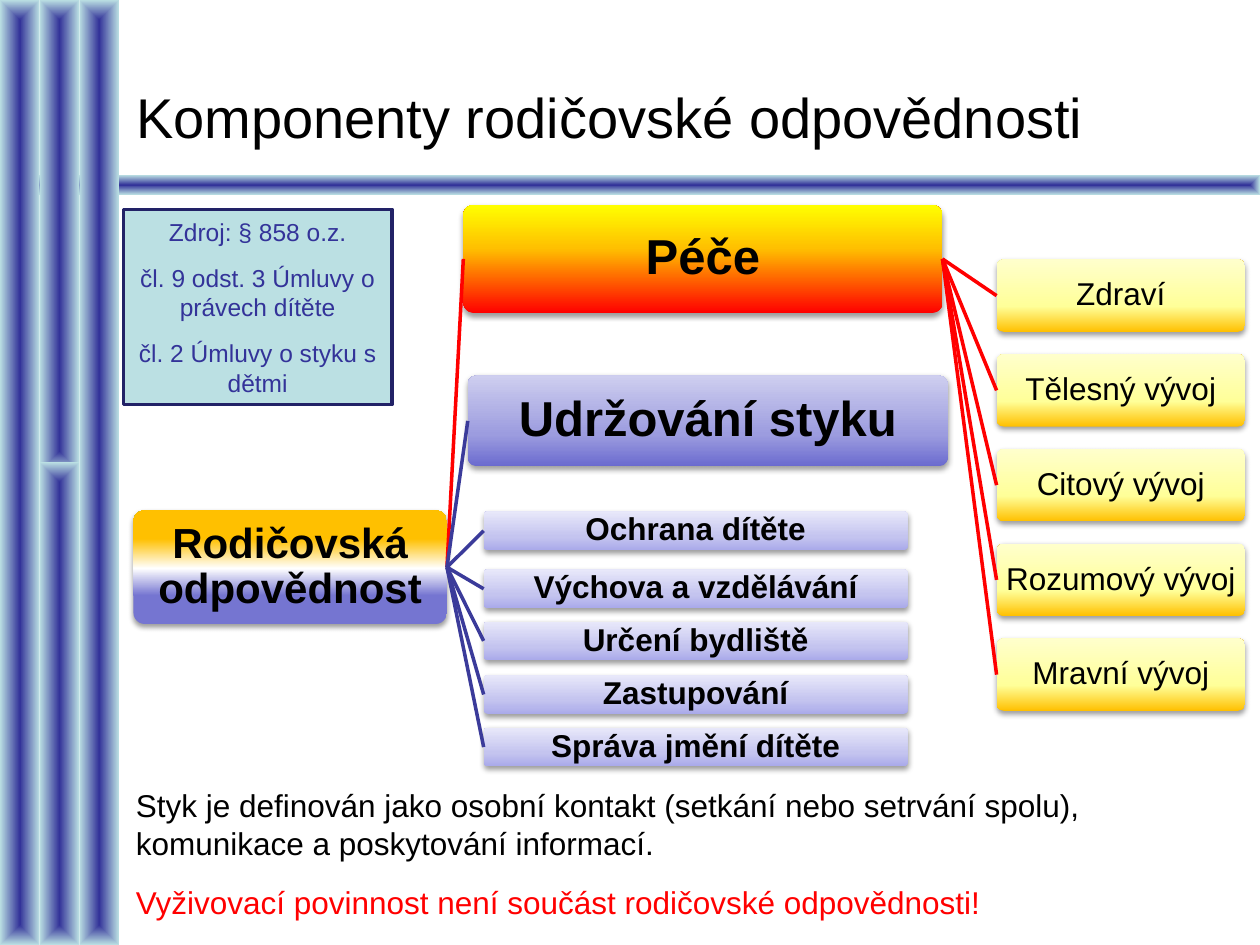
from lxml import etree
from pptx import Presentation
from pptx.dml.color import RGBColor
from pptx.enum.shapes import MSO_CONNECTOR, MSO_SHAPE
from pptx.enum.text import MSO_ANCHOR, MSO_AUTO_SIZE, PP_ALIGN
from pptx.oxml import parse_xml
from pptx.oxml.ns import nsdecls, qn
from pptx.util import Cm, Pt

RECT, ROUND = MSO_SHAPE.RECTANGLE, MSO_SHAPE.ROUNDED_RECTANGLE
LINE = MSO_CONNECTOR.STRAIGHT
LEFT, CENTER = PP_ALIGN.LEFT, PP_ALIGN.CENTER
TOP, MIDDLE = MSO_ANCHOR.TOP, MSO_ANCHOR.MIDDLE
LEFT_SITE, RIGHT_SITE = 1, 3  # connection sites of a box

# Content
TITLE = "Komponenty rodičovské odpovědnosti"
ROOT = "Rodičovská odpovědnost"
CARE = "Péče"
TOUCH = "Udržování styku"
GROWTH = ["Zdraví", "Tělesný vývoj", "Citový vývoj", "Rozumový vývoj", "Mravní vývoj"]
RIGHTS = [  # text, top in cm
    ("Ochrana dítěte", 10.31),
    ("Výchova a vzdělávání", 11.48),
    ("Určení bydliště", 12.53),
    ("Zastupování", 13.61),
    ("Správa jmění dítěte", 14.67),
]
LAWS = [
    "Zdroj: § 858 o.z.",
    "čl. 9 odst. 3 Úmluvy o právech dítěte",
    "čl. 2 Úmluvy o styku s dětmi",
]
NOTES = [
    "Styk je definován jako osobní kontakt (setkání nebo setrvání spolu), "
    "komunikace a poskytování informací.",
    "Vyživovací povinnost není součást rodičovské odpovědnosti!",
]

# Theme; gradient stops run from bottom to top, or from the middle outwards
THEME = {
    "font": "Arial",
    "size": {"title": 32, "main": 28, "root": 24, "text": 18, "law": 14},
    "ink": "000000", "red": "FF0000", "blue": "3B3B9A",
    "law": "333399", "pale": "BBE0E3", "edge": "222267",
    "band": [(0, "333399"), (100, "BBE0E3")],
    "root": [(0, "7575D1"), (25, "7575D1"), (49, "FFFFFF"), (75, "FFC000"), (100, "FFC000")],
    "care": [(0, "FF0000"), (60, "FFC000"), (100, "FFFF00")],
    "touch": [(0, "6B6BCF"), (35, "9C9CDF"), (100, "CECEEF")],
    "right": [(0, "AAAAEA"), (35, "C4C4EF"), (100, "E8E8FA")],
    "growth": [(0, "FFC000"), (35, "FFFF99"), (100, "FFFFCC")],
}
SIZE = THEME["size"]

# Places in cm: left, top, width, height
BANDS = [
    (0, 3.53, 25.4, 0.4),
    (0, 0, 0.8, 19.05),
    (1.6, 0, 0.8, 19.05),
    (0.8, 0, 0.8, 9.5),
    (0.8, 9.32, 0.8, 9.73),
]
GROWTH_TOP, GROWTH_STEP = 5.23, 1.91

deck = Presentation()
deck.slide_width, deck.slide_height = Cm(25.4), Cm(19.05)
slide = deck.slides.add_slide(deck.slide_layouts[5])
shapes = slide.shapes


def color(name):
    return RGBColor.from_string(THEME[name])


def blend(shape, stops, way):
    """Fill a shape with a gradient of many stops."""
    marks = "".join(
        f'<a:gs pos="{pos * 1000}"><a:srgbClr val="{tone}"/></a:gs>' for pos, tone in stops
    )
    fill = parse_xml(f'<a:gradFill {nsdecls("a")}><a:gsLst>{marks}</a:gsLst>{way}</a:gradFill>')
    shape._element.spPr.find(qn("a:prstGeom")).addnext(fill)


def shade(shape):
    shape._element.spPr.append(parse_xml(
        f'<a:effectLst {nsdecls("a")}><a:outerShdw blurRad="40000" dist="20000" dir="5400000" '
        'rotWithShape="0"><a:srgbClr val="000000"><a:alpha val="38000"/></a:srgbClr>'
        '</a:outerShdw></a:effectLst>'
    ))


def write(shape, lines, size, tones, bold=False, align=LEFT, anchor=TOP, gap=0):
    frame = shape.text_frame
    frame.word_wrap = True
    frame.auto_size = MSO_AUTO_SIZE.NONE
    frame.vertical_anchor = anchor
    frame.text = "\n".join(lines)
    for i, (par, tone) in enumerate(zip(frame.paragraphs, tones)):
        par.alignment = align
        if i:
            par.space_before = Pt(gap)
        font = par.font
        font.name, font.size, font.bold = THEME["font"], Pt(size), bold
        font.color.rgb = color(tone)
    return frame


def add_box(text, place, stops, size, bold=True):
    box = shapes.add_shape(ROUND, *map(Cm, place))
    box.adjustments[0] = 0.1
    blend(box, THEME[stops], '<a:lin ang="16200000" scaled="0"/>')
    box.line.fill.background()
    shade(box)
    frame = write(box, [text], SIZE[size], ["ink"], bold, CENTER, MIDDLE)
    frame.paragraphs[0].line_spacing = 0.9
    frame.margin_left = frame.margin_right = Cm(0.04)
    frame.margin_top = frame.margin_bottom = Cm(0.04)
    return box


def link(start, end, tone):
    line = shapes.add_connector(LINE, 0, 0, 0, 0)
    line.begin_connect(start, RIGHT_SITE)
    line.end_connect(end, LEFT_SITE)
    line.line.color.rgb = color(tone)
    line.line.width = Pt(2)
    etree.SubElement(line._element.spPr, qn("a:effectLst"))


# Bands of the frame
for place in BANDS:
    band = shapes.add_shape(RECT, *map(Cm, place))
    blend(band, THEME["band"],
          '<a:path path="shape"><a:fillToRect l="50000" t="50000" r="50000" b="50000"/></a:path>')
    band.line.fill.background()
    band.shadow.inherit = False

# Title
title = shapes.title
title.left, title.top, title.width, title.height = map(Cm, (2.49, 0.76, 22.6, 3.18))
write(title, [TITLE], SIZE["title"], ["ink"], anchor=MIDDLE)

# Tree: root, two main parts, then the smaller parts
root = add_box(ROOT, (2.69, 10.29, 6.32, 2.29), "root", "root")
care = add_box(CARE, (9.34, 4.13, 9.66, 2.18), "care", "main")
touch = add_box(TOUCH, (9.43, 7.57, 9.68, 1.83), "touch", "main")
link(root, care, "red")
link(root, touch, "blue")

for text, top in RIGHTS:
    box = add_box(text, (9.75, top, 8.55, 0.78), "right", "text")
    link(root, box, "blue")

for i, text in enumerate(GROWTH):
    place = (20.09, GROWTH_TOP + i * GROWTH_STEP, 5.01, 1.46)
    box = add_box(text, place, "growth", "text", bold=False)
    link(care, box, "red")

# Notes under the tree
notes = shapes.add_textbox(*map(Cm, (2.49, 15.72, 22.91, 3.02)))
write(notes, NOTES, SIZE["text"], ["ink", "red"], gap=12.5)

# Box of legal sources
laws = shapes.add_shape(RECT, *map(Cm, (2.49, 4.22, 5.41, 3.94)))
laws.shadow.inherit = False
laws.fill.solid()
laws.fill.fore_color.rgb = color("pale")
laws.line.color.rgb = color("edge")
laws.line.width = Pt(2)
write(laws, LAWS, SIZE["law"], ["law"] * len(LAWS), align=CENTER, anchor=MIDDLE, gap=9.5)

deck.save("out.pptx")
